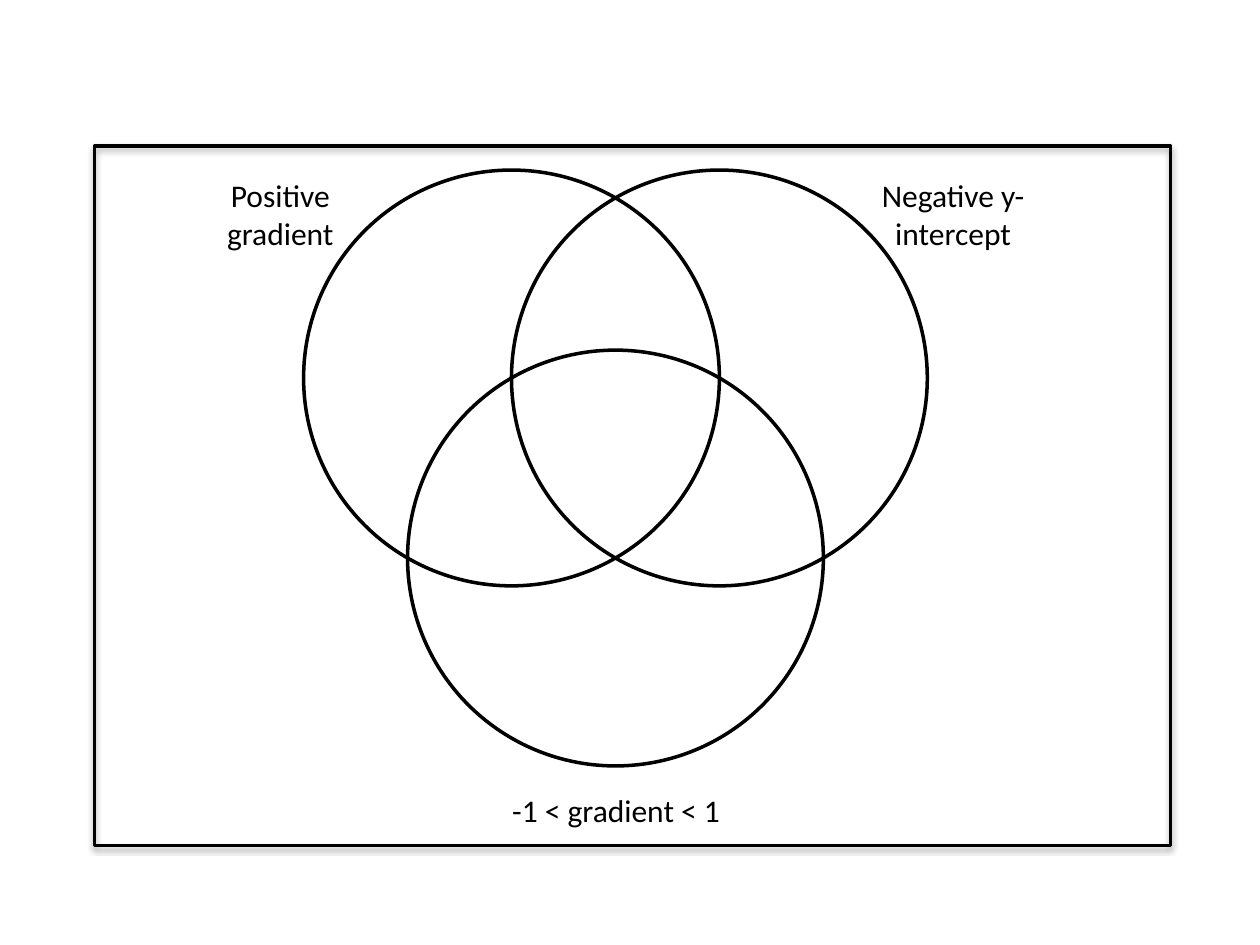
from math import sqrt

from lxml import etree
from pptx import Presentation
from pptx.dml.color import RGBColor
from pptx.enum.shapes import MSO_SHAPE
from pptx.enum.text import MSO_AUTO_SIZE, PP_ALIGN
from pptx.oxml.ns import qn
from pptx.util import Inches, Pt

OVAL = MSO_SHAPE.OVAL
RECTANGLE = MSO_SHAPE.RECTANGLE
CENTER = PP_ALIGN.CENTER
GROW = MSO_AUTO_SIZE.SHAPE_TO_FIT_TEXT
BLANK_LAYOUT = 6
BLACK = "000000"


def color(value):
    return RGBColor.from_string(value)


def add_outline(shapes, kind, left, top, width, height):
    """Add an unfilled shape with a black line."""
    shape = shapes.add_shape(
        kind, Inches(left), Inches(top), Inches(width), Inches(height))
    shape.shadow.inherit = False
    shape.fill.background()
    shape.line.color.rgb = color(BLACK)
    shape.line.width = Pt(2)
    return shape


def add_text(page, text, left, top, width, height, size=18, font="Calibri", fill=BLACK):
    box = page.shapes.add_textbox(
        Inches(left), Inches(top), Inches(width), Inches(height))
    frame = box.text_frame
    frame.word_wrap = True
    frame.auto_size = GROW
    para = frame.paragraphs[0]
    para.alignment = CENTER
    span = para.add_run()
    span.text = text
    span.font.size = Pt(size)
    span.font.name = font
    span.font.color.rgb = color(fill)


def add_drop_shadow(shape, blur, distance, degrees, opacity):
    effects = shape.element.spPr.find(qn("a:effectLst"))
    shadow = etree.SubElement(
        effects, qn("a:outerShdw"), blurRad=str(Pt(blur)), dist=str(Pt(distance)),
        dir=str(degrees * 60000), rotWithShape="0")
    tint = etree.SubElement(shadow, qn("a:srgbClr"), val=BLACK)
    etree.SubElement(tint, qn("a:alpha"), val=str(opacity * 1000))


def add_circles(page, left, top, diameter):
    """Group three circles whose centres form an equilateral triangle."""
    radius = diameter / 2
    group = page.shapes.add_group_shape()
    offsets = [(0, 0), (radius, 0), (radius / 2, radius * sqrt(3) / 2)]
    for across, down in offsets:
        add_outline(group.shapes, OVAL, left + across, top + down, diameter, diameter)


def add_venn_diagram(page, left, top, width, height):
    circles_top = top + 0.19
    add_circles(page, left + 1.66, circles_top, 3.3)
    add_text(page, "Positive gradient", left + 0.69, circles_top, 1.57, 0.71)
    add_text(page, "Negative y-intercept", left + 6.03, circles_top, 1.57, 0.71)
    add_text(page, "-1 < gradient < 1", left + 3.15, top + 5.07, 1.98, 0.4)
    frame = add_outline(page.shapes, RECTANGLE, left, top, width, height)
    add_drop_shadow(frame, blur=3.1, distance=1.8, degrees=90, opacity=35)


def main():
    deck = Presentation()
    deck.slide_width = Inches(10)
    deck.slide_height = Inches(7.5)
    page = deck.slides.add_slide(deck.slide_layouts[BLANK_LAYOUT])
    add_venn_diagram(page, 0.75, 1.16, 8.54, 5.55)
    deck.save("out.pptx")


if __name__ == "__main__":
    main()
